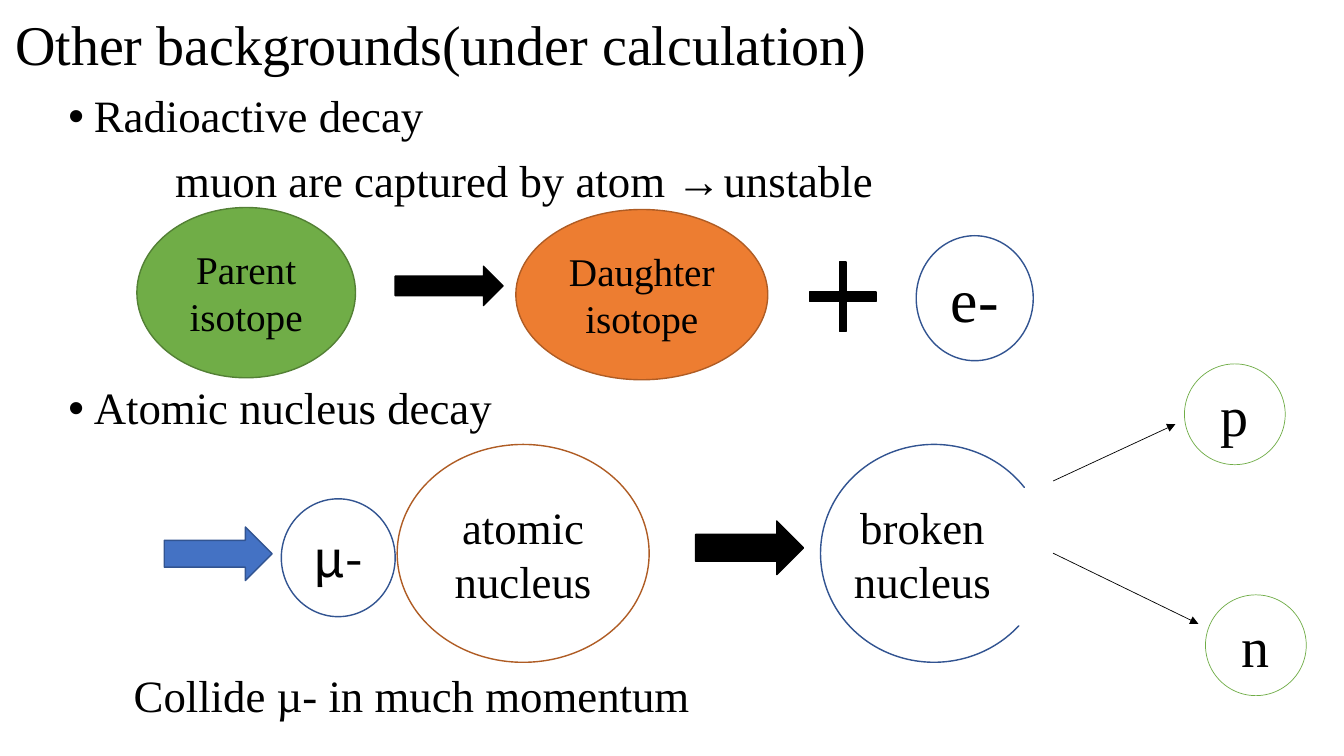
"""Build the slide on further muon backgrounds."""
from lxml.etree import SubElement
from pptx import Presentation
from pptx.dml.color import RGBColor
from pptx.enum.shapes import MSO_CONNECTOR, MSO_SHAPE as SHAPE
from pptx.enum.text import MSO_ANCHOR as ANCHOR, MSO_AUTO_SIZE as AUTO_SIZE, PP_ALIGN as ALIGN
from pptx.oxml.ns import qn
from pptx.util import Cm, Pt

SERIF = "Times New Roman"
SANS = "Noto Sans CJK JP"
COLORS = {
    "black": "000000", "blue": "4472C4", "dark_blue": "325491",
    "green": "70AD47", "dark_green": "538035",
    "orange": "ED7D31", "dark_orange": "AF5C24",
}


def rgb(color):
    """Return the named colour."""
    return RGBColor.from_string(COLORS[color])


def place(item, box):
    """Move an item to left, top, width and height in centimetres."""
    item.left, item.top, item.width, item.height = (Cm(length) for length in box)


def write(paragraph, words, size, align, font=SERIF):
    """Add one formatted run to a paragraph."""
    paragraph.alignment = align
    run = paragraph.add_run()
    run.text = words
    run.font.name = font
    run.font.size = Pt(size)
    run.font.color.rgb = rgb("black")


def add_title(slide, words, box):
    """Fill the title placeholder."""
    title = slide.shapes.title
    place(title, box)
    frame = title.text_frame
    frame.auto_size = AUTO_SIZE.NONE
    frame.vertical_anchor = ANCHOR.MIDDLE
    heading = frame.paragraphs[0]
    heading.line_spacing = 0.9
    write(heading, words, 40, ALIGN.LEFT)


def add_list(slide, entries, box):
    """Fill the body with entries of text, bullet flag and space before."""
    body = slide.placeholders[1]
    place(body, box)
    frame = body.text_frame
    frame.auto_size = AUTO_SIZE.NONE
    for index, (words, bulleted, space) in enumerate(entries):
        entry = frame.add_paragraph() if index else frame.paragraphs[0]
        properties = entry._p.get_or_add_pPr()
        if bulleted:
            margin, indent = Cm(0.64), Cm(-0.64)
            SubElement(properties, qn("a:buFont"), typeface="Arial")
            SubElement(properties, qn("a:buChar"), char="•")
        else:
            margin, indent = 0, Cm(2.69)
            SubElement(properties, qn("a:buNone"))
            stops = SubElement(properties, qn("a:tabLst"))
            SubElement(stops, qn("a:tab"), pos=str(Cm(17.27)), algn="l")
        properties.set("marL", str(margin))
        properties.set("indent", str(indent))
        entry.line_spacing = 0.9
        entry.space_before = Pt(space)
        write(entry, words, 32, ALIGN.LEFT)


def add_figure(slide, kind, box, line, fill=None, width=1, adjustments=()):
    """Add a preset shape, hollow unless a fill is given."""
    figure = slide.shapes.add_shape(kind, *(Cm(length) for length in box))
    figure.shadow.inherit = False
    for index, value in enumerate(adjustments):
        figure.adjustments[index] = value
    if fill:
        figure.fill.solid()
        figure.fill.fore_color.rgb = rgb(fill)
    else:
        figure.fill.background()
    figure.line.color.rgb = rgb(line)
    figure.line.width = Pt(width)
    return figure


def label(figure, lines, size, font=SERIF):
    """Centre lines of text in a shape."""
    frame = figure.text_frame
    frame.word_wrap = True
    frame.vertical_anchor = ANCHOR.MIDDLE
    for index, words in enumerate(lines):
        paragraph = frame.add_paragraph() if index else frame.paragraphs[0]
        write(paragraph, words, size, ALIGN.CENTER, font)


def add_caption(slide, words, box):
    """Add a line of free text."""
    caption = slide.shapes.add_textbox(*(Cm(length) for length in box))
    frame = caption.text_frame
    frame.word_wrap = False
    write(frame.paragraphs[0], words, 32, ALIGN.LEFT)


def add_path(slide, start, end):
    """Draw a thin arrow along the path of an ejected nucleon."""
    ends = (Cm(length) for length in start + end)
    path = slide.shapes.add_connector(MSO_CONNECTOR.STRAIGHT, *ends)
    path.line.color.rgb = rgb("black")
    path.line.width = Pt(0.5)
    properties = path._element.spPr
    SubElement(properties.find(qn("a:ln")), qn("a:tailEnd"), type="triangle")
    SubElement(properties, qn("a:effectLst"))


def main():
    """Build and save the slide."""
    deck = Presentation()
    deck.slide_width, deck.slide_height = Cm(33.87), Cm(19.05)
    slide = deck.slides.add_slide(deck.slide_layouts[1])

    add_title(slide, "Other backgrounds(under calculation)", (0.13, 0.23, 29.21, 1.93))
    add_list(slide, (
        ("Radioactive decay", True, 0),
        ("muon are captured by atom →\tunstable", False, 12),
        ("Atomic nucleus decay", True, 127.5),
    ), (1.47, 2.24, 32, 16.59))

    particles = (
        (("Parent", "isotope"), (3.45, 5.23, 5.51, 4.29), "dark_green", "green", 1, 28, SERIF),
        (("Daughter isotope",), (13, 5.28, 6.35, 4.29), "dark_orange", "orange", 1, 28, SERIF),
        (("e-",), (23.09, 5.94, 2.95, 3.15), "dark_blue", None, 1, 44, SERIF),
        (("µ-",), (7.09, 12.57, 2.87, 2.97), "dark_blue", None, 1, 36, SANS),
        (("atomic nucleus",), (10.01, 11.2, 6.35, 5.49), "dark_orange", None, 1, 32, SERIF),
        (("n",), (30.38, 14.99, 2.54, 2.54), "green", None, 0.5, 40, SERIF),
        (("p",), (29.85, 9.17, 2.54, 2.54), "green", None, 0.5, 40, SERIF),
    )
    for lines, box, line, fill, width, size, font in particles:
        label(add_figure(slide, SHAPE.OVAL, box, line, fill, width), lines, size, font)

    broken = add_figure(slide, SHAPE.BLOCK_ARC, (20.68, 11.2, 5.72, 5.49),
                        "dark_blue", "blue", adjustments=(24.3, 194.33, 0))
    label(broken, ("broken nucleus",), 32)

    for box, line, fill in (
        ((9.96, 6.71, 2.72, 0.99), "black", "black"),
        ((4.14, 13.28, 2.72, 1.35), "dark_blue", "blue"),
        ((17.53, 13.13, 2.72, 1.35), "black", "black"),
    ):
        add_figure(slide, SHAPE.RIGHT_ARROW, box, line, fill)
    add_figure(slide, SHAPE.CROSS, (20.4, 6.6, 1.68, 1.75), "black", "black",
               adjustments=(0.45,))

    add_caption(slide, "Collide µ- in much momentum", (3.12, 16.71, 15.21, 1.63))
    add_path(slide, (26.54, 12.12), (29.62, 10.69))
    add_path(slide, (26.54, 13.94), (30.2, 15.72))
    deck.save("out.pptx")


if __name__ == "__main__":
    main()
